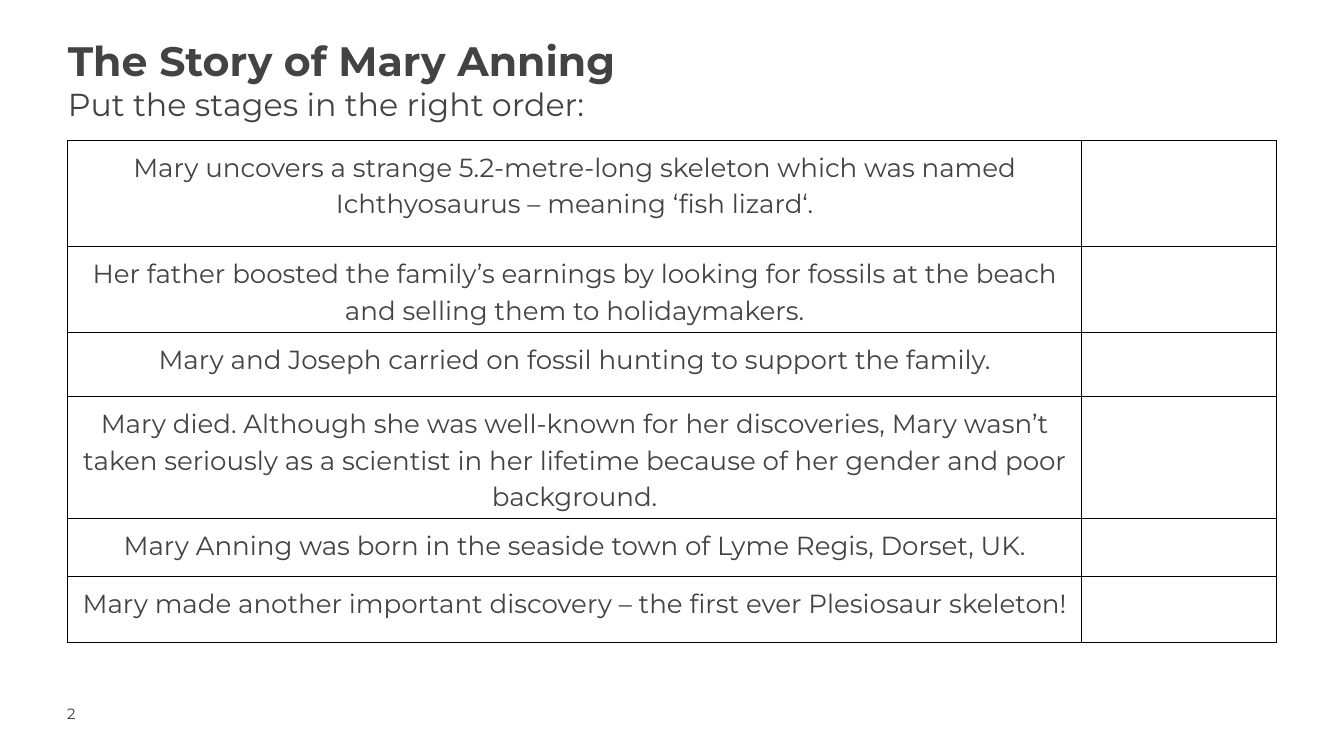
"""Build a slide with a table for ordering the stages of Mary Anning's life."""
from dataclasses import dataclass

from lxml.etree import SubElement
from pptx import Presentation
from pptx.dml.color import RGBColor as Color
from pptx.enum.text import MSO_ANCHOR as Anchor, PP_ALIGN as Align
from pptx.oxml.ns import qn
from pptx.util import Inches, Pt

HEADING = "The Story of Mary Anning"
TASK = "Put the stages in the right order:"
PAGE_NUMBER = "2"
STAGES = [
    ("Mary uncovers a strange 5.2-metre-long skeleton which was named "
     "Ichthyosaurus – meaning ‘fish lizard‘.", 1.58),
    ("Her father boosted the family’s earnings by looking for fossils at the beach "
     "and selling them to holidaymakers.", 0.97),
    ("Mary and Joseph carried on fossil hunting to support the family.", 0.96),
    ("Mary died. Although she was well-known for her discoveries, Mary wasn’t "
     "taken seriously as a scientist in her lifetime because of her gender and poor "
     "background.", 0.97),
    ("Mary Anning was born in the seaside town of Lyme Regis, Dorset, UK.", 0.87),
    ("Mary made another important discovery – the first ever Plesiosaur skeleton!", 0.97),
]

WIDTH, HEIGHT = 20, 11.25
MARGIN = 1.01
COLUMNS = (15.08, 2.9)
TABLE_TOP = 2.09
CELL_PADDING = (0.07, 0.1)


@dataclass(frozen=True)
class Theme:
    font: str = "Montserrat"
    text: str = "434343"
    number: str = "4B3241"
    border: str = "000000"
    heading_size: int = 44
    task_size: int = 34
    cell_size: int = 28
    number_size: int = 16
    border_width: int = 1
    line_spacing: float = 1.15


THEME = Theme()


def style(paragraph, size, color=THEME.text, bold=False):
    font = paragraph.font
    for run in paragraph.runs:
        font = run.font
        font.name, font.size, font.bold = THEME.font, Pt(size), bold
        font.color.rgb = Color.from_string(color)


def add_text(slide, text, left, top, width, height):
    shape = slide.shapes.add_textbox(*map(Inches, (left, top, width, height)))
    frame = shape.text_frame
    frame.word_wrap = True
    frame.vertical_anchor = Anchor.TOP
    frame.margin_left = frame.margin_right = frame.margin_top = frame.margin_bottom = 0
    frame.text = text
    return frame.paragraphs


def add_borders(cell):
    properties = cell._tc.get_or_add_tcPr()
    for side in ("lnL", "lnR", "lnT", "lnB"):
        line = SubElement(properties, qn(f"a:{side}"), w=str(Pt(THEME.border_width)))
        fill = SubElement(line, qn("a:solidFill"))
        SubElement(fill, qn("a:srgbClr"), val=THEME.border)


def add_stage_table(slide):
    heights = [height for _, height in STAGES]
    table = slide.shapes.add_table(
        len(STAGES), len(COLUMNS), Inches(MARGIN), Inches(TABLE_TOP),
        Inches(sum(COLUMNS)), Inches(sum(heights))).table
    table.first_row = table.horz_banding = False
    for column, width in zip(table.columns, COLUMNS):
        column.width = Inches(width)
    for row, (stage, height) in zip(table.rows, STAGES):
        row.height = Inches(height)
        row.cells[0].text_frame.text = stage
        for cell in row.cells:
            add_borders(cell)
            cell.fill.background()
            cell.margin_left = cell.margin_right = Inches(CELL_PADDING[0])
            cell.margin_top = cell.margin_bottom = Inches(CELL_PADDING[1])
            paragraph = cell.text_frame.paragraphs[0]
            paragraph.alignment = Align.CENTER
            paragraph.line_spacing = THEME.line_spacing
            style(paragraph, THEME.cell_size)


def main():
    presentation = Presentation()
    presentation.slide_width, presentation.slide_height = Inches(WIDTH), Inches(HEIGHT)
    slide = presentation.slides.add_slide(presentation.slide_layouts[6])

    number, = add_text(slide, PAGE_NUMBER, 1, 10.48, 1.57, 0.39)
    style(number, THEME.number_size, THEME.number)
    heading, task = add_text(slide, f"{HEADING}\n{TASK}", MARGIN, 0.42, 11.75, 1.9)
    heading.line_spacing = THEME.line_spacing
    style(heading, THEME.heading_size, bold=True)
    style(task, THEME.task_size)
    add_stage_table(slide)
    presentation.save("out.pptx")


if __name__ == "__main__":
    main()
